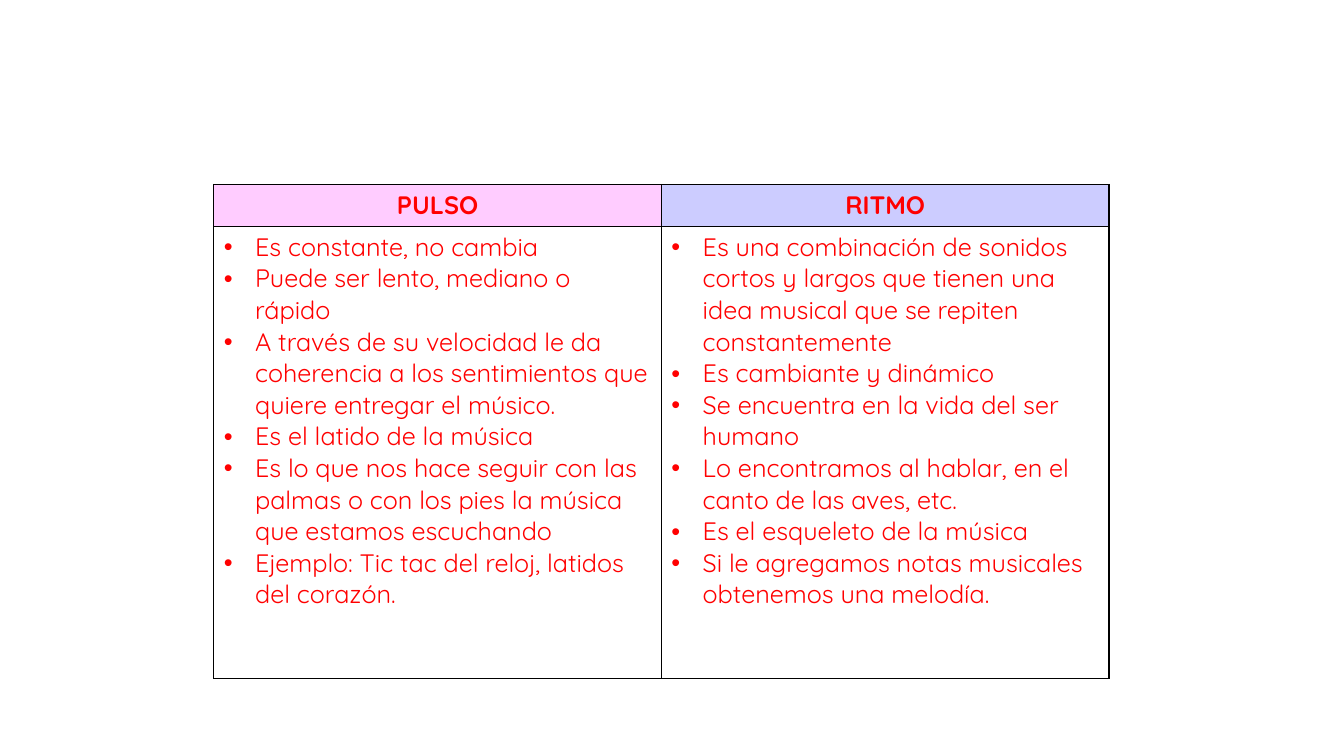
from dataclasses import dataclass

from lxml.etree import SubElement
from pptx import Presentation
from pptx.dml.color import RGBColor
from pptx.enum.text import PP_ALIGN
from pptx.oxml.ns import qn
from pptx.util import Inches, Pt


@dataclass(frozen=True)
class Theme:
    font: str = "Quicksand"
    size: int = 18
    text: str = "FF0000"
    border: str = "000000"
    border_width: int = 1
    body_fill: str = "FFFFFF"
    pulse_fill: str = "FFCCFF"
    rhythm_fill: str = "CCCCFF"
    bullet_indent: float = 0.31


THEME = Theme()

COLUMNS = [
    ("PULSO", THEME.pulse_fill, [
        "Es constante, no cambia",
        "Puede ser lento, mediano o rápido",
        "A través de su velocidad le da coherencia a los sentimientos que quiere entregar el músico.",
        "Es el latido de la música",
        "Es lo que nos hace seguir con las palmas o con los pies la música que estamos escuchando",
        "Ejemplo: Tic tac del reloj, latidos del corazón.",
    ]),
    ("RITMO", THEME.rhythm_fill, [
        "Es una combinación de sonidos cortos y largos que tienen una idea musical que se repiten constantemente",
        "Es cambiante y dinámico",
        "Se encuentra en la vida del ser humano",
        "Lo encontramos al hablar, en el canto de las aves, etc.",
        "Es el esqueleto de la música",
        "Si le agregamos notas musicales obtenemos una melodía.",
    ]),
]


class SlideBuilder:
    def __init__(self, slide, theme):
        self.slide = slide
        self.theme = theme

    def comparison_table(self, columns, left, top, column_width, row_heights):
        """Add one column per (heading, heading fill, bullet items)."""
        table = self.slide.shapes.add_table(
            len(row_heights), len(columns), Inches(left), Inches(top),
            Inches(column_width * len(columns)), Inches(sum(row_heights)),
        ).table
        for row, height in zip(table.rows, row_heights):
            row.height = Inches(height)
        for index, (heading, fill, items) in enumerate(columns):
            table.columns[index].width = Inches(column_width)
            self.heading_cell(table.cell(0, index), heading, fill)
            self.list_cell(table.cell(1, index), items)

    def heading_cell(self, cell, heading, fill):
        self.format_cell(cell, fill)
        paragraph = cell.text_frame.paragraphs[0]
        paragraph.alignment = PP_ALIGN.CENTER
        self.add_text(paragraph, heading, bold=True)

    def list_cell(self, cell, items):
        self.format_cell(cell, self.theme.body_fill)
        frame = cell.text_frame
        for index, item in enumerate(items):
            paragraph = frame.add_paragraph() if index else frame.paragraphs[0]
            self.add_bullet(paragraph)
            self.add_text(paragraph, item, bold=False)

    def add_bullet(self, paragraph):
        properties = paragraph._p.get_or_add_pPr()
        indent = Inches(self.theme.bullet_indent)
        for name, value in {"marL": indent, "indent": -indent}.items():
            properties.set(name, str(value))
        SubElement(properties, qn("a:buFont"), typeface="Arial")
        SubElement(properties, qn("a:buChar"), char="•")

    def add_text(self, paragraph, text, bold):
        run = paragraph.add_run()
        run.text = text
        font_format = {"name": self.theme.font, "size": Pt(self.theme.size), "bold": bold}
        for name, value in font_format.items():
            setattr(run.font, name, value)
        run.font.color.rgb = RGBColor.from_string(self.theme.text)

    def format_cell(self, cell, fill):
        """Draw the four borders, then the fill, as the schema orders them."""
        properties = cell._tc.get_or_add_tcPr()
        for side in ("a:lnL", "a:lnR", "a:lnT", "a:lnB"):
            line = SubElement(properties, qn(side), w=str(Pt(self.theme.border_width)))
            solid = SubElement(line, qn("a:solidFill"))
            SubElement(solid, qn("a:srgbClr"), val=self.theme.border)
        cell.fill.solid()
        cell.fill.fore_color.rgb = RGBColor.from_string(fill)


def main():
    presentation = Presentation()
    presentation.slide_width = Inches(13.33)
    presentation.slide_height = Inches(7.5)
    blank_layout = presentation.slide_layouts[6]
    builder = SlideBuilder(presentation.slides.add_slide(blank_layout), THEME)
    builder.comparison_table(
        COLUMNS, left=2.12, top=1.83, column_width=4.44, row_heights=[0.41, 4.49]
    )
    presentation.save("out.pptx")


if __name__ == "__main__":
    main()
